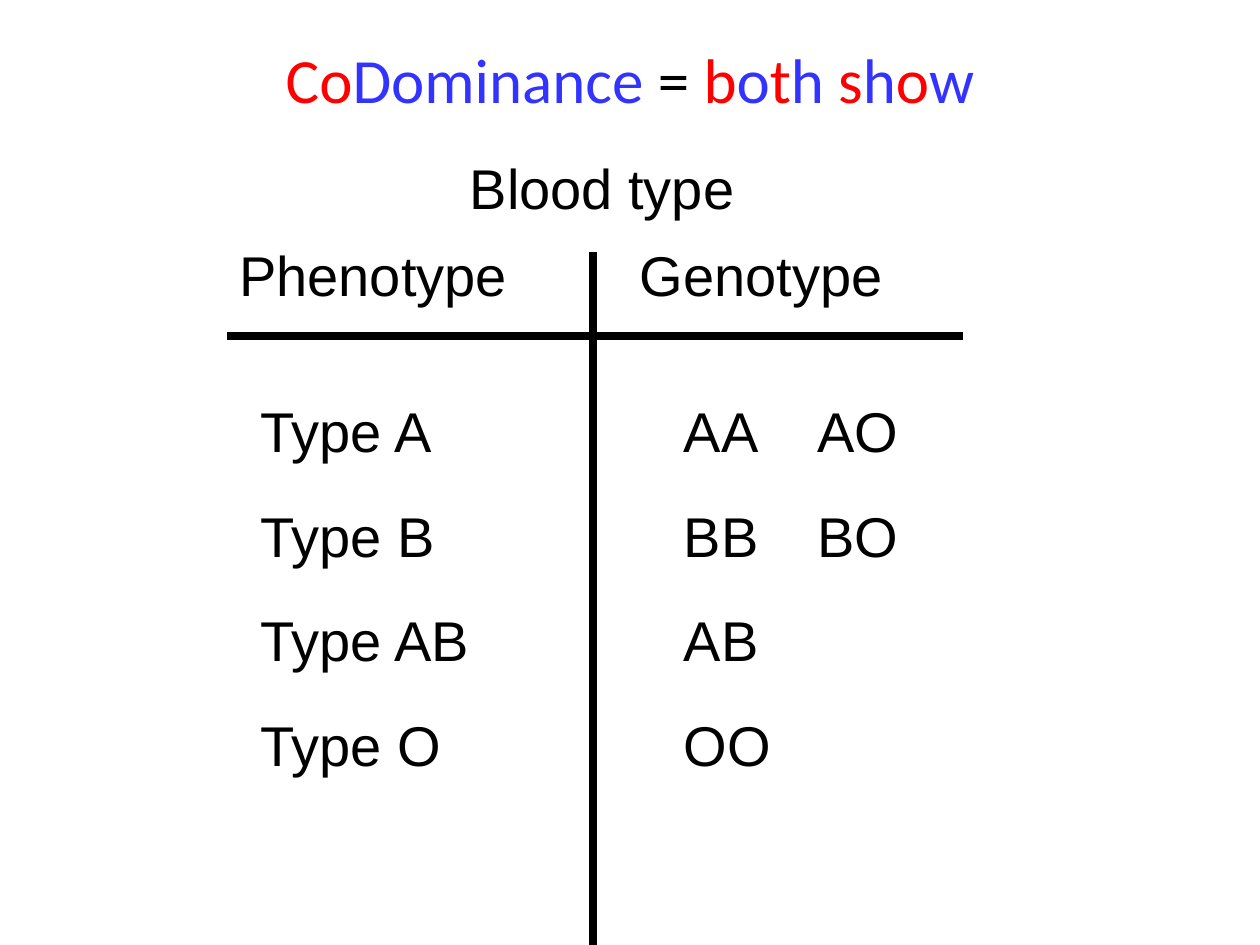
import pptx
import pptx.util
import pptx.dml.color
import pptx.enum.text
import pptx.enum.shapes
import lxml.etree

TITLE = [
    ("Co", "red"), ("Dominance", "blue"), (" = ", "black"),
    ("b", "red"), ("o", "blue"), ("t", "red"), ("h ", "blue"),
    ("s", "red"), ("h", "blue"), ("o", "red"), ("w", "blue"),
]
CAPTION = "Blood type"
HEADINGS = ["Phenotype", "Genotype"]
BLOOD_TYPES = [
    ("Type A", ["AA", "AO"]),
    ("Type B", ["BB", "BO"]),
    ("Type AB", ["AB"]),
    ("Type O", ["OO"]),
]

THEME = {
    "red": "FF0000", "blue": "3333FF", "black": "000000",
    "title_font": "Calibri", "title_size": 36,
    "body_font": "Arial", "body_size": 32,
    "rule_width": 4.5,
}

WIDTH, HEIGHT = 10, 7.5
TEXT_HEIGHT = 0.64
HEADING_WIDTH = 2.65
HEADING_TOP = 1.86
CHART_LEFT, CHART_RIGHT = 1.8, 7.64
RULE_TOP, DIVIDER_TOP = 2.67, 2
DIVIDER_LEFT = 4.71
HEADING_LEFTS = [CHART_LEFT, 4.98]
PHENOTYPE_LEFT, PHENOTYPE_WIDTH = 1.97, 2.3
GENOTYPE_LEFT, GENOTYPE_PITCH, GENOTYPE_WIDTH = 5.33, 1.06, 1.03
ROW_TOP, ROW_PITCH = 3.1, 0.83


def rgb(name):
    return pptx.dml.color.RGBColor.from_string(THEME[name])


def add_text(slide, runs, left, top, width, height=TEXT_HEIGHT, role="body"):
    frame = slide.shapes.add_textbox(
        *map(pptx.util.Inches, (left, top, width, height))).text_frame
    frame.word_wrap = True
    paragraph = frame.paragraphs[0]
    paragraph.font.name = THEME[role + "_font"]
    paragraph.font.size = pptx.util.Pt(THEME[role + "_size"])
    for words, color in runs:
        run = paragraph.add_run()
        run.text = words
        run.font.color.rgb = rgb(color)
    return frame


def add_rule(slide, *ends):
    rule = slide.shapes.add_connector(
        pptx.enum.shapes.MSO_CONNECTOR.STRAIGHT, *map(pptx.util.Inches, ends))
    rule.line.color.rgb = rgb("black")
    rule.line.width = pptx.util.Pt(THEME["rule_width"])
    properties = rule._element.spPr
    lxml.etree.SubElement(properties, pptx.oxml.ns.qn("a:effectLst"))


def main():
    deck = pptx.Presentation()
    deck.slide_width = pptx.util.Inches(WIDTH)
    deck.slide_height = pptx.util.Inches(HEIGHT)
    slide = deck.slides.add_slide(deck.slide_layouts[6])

    title = add_text(slide, TITLE, 0.075 * WIDTH, 0.25, 0.85 * WIDTH, 0.75, "title")
    title.vertical_anchor = pptx.enum.text.MSO_ANCHOR.MIDDLE
    title.paragraphs[0].alignment = pptx.enum.text.PP_ALIGN.CENTER

    add_rule(slide, CHART_LEFT, RULE_TOP, CHART_RIGHT, RULE_TOP)
    add_rule(slide, DIVIDER_LEFT, DIVIDER_TOP, DIVIDER_LEFT, HEIGHT)

    add_text(slide, [(CAPTION, "black")], 3.63, 1.17, HEADING_WIDTH)
    for heading, left in zip(HEADINGS, HEADING_LEFTS):
        add_text(slide, [(heading, "black")], left, HEADING_TOP, HEADING_WIDTH)

    for row, (phenotype, genotypes) in enumerate(BLOOD_TYPES):
        top = ROW_TOP + row * ROW_PITCH
        add_text(slide, [(phenotype, "black")], PHENOTYPE_LEFT, top, PHENOTYPE_WIDTH)
        for column, genotype in enumerate(genotypes):
            left = GENOTYPE_LEFT + column * GENOTYPE_PITCH
            add_text(slide, [(genotype, "black")], left, top, GENOTYPE_WIDTH)

    deck.save("out.pptx")


if __name__ == "__main__":
    main()
